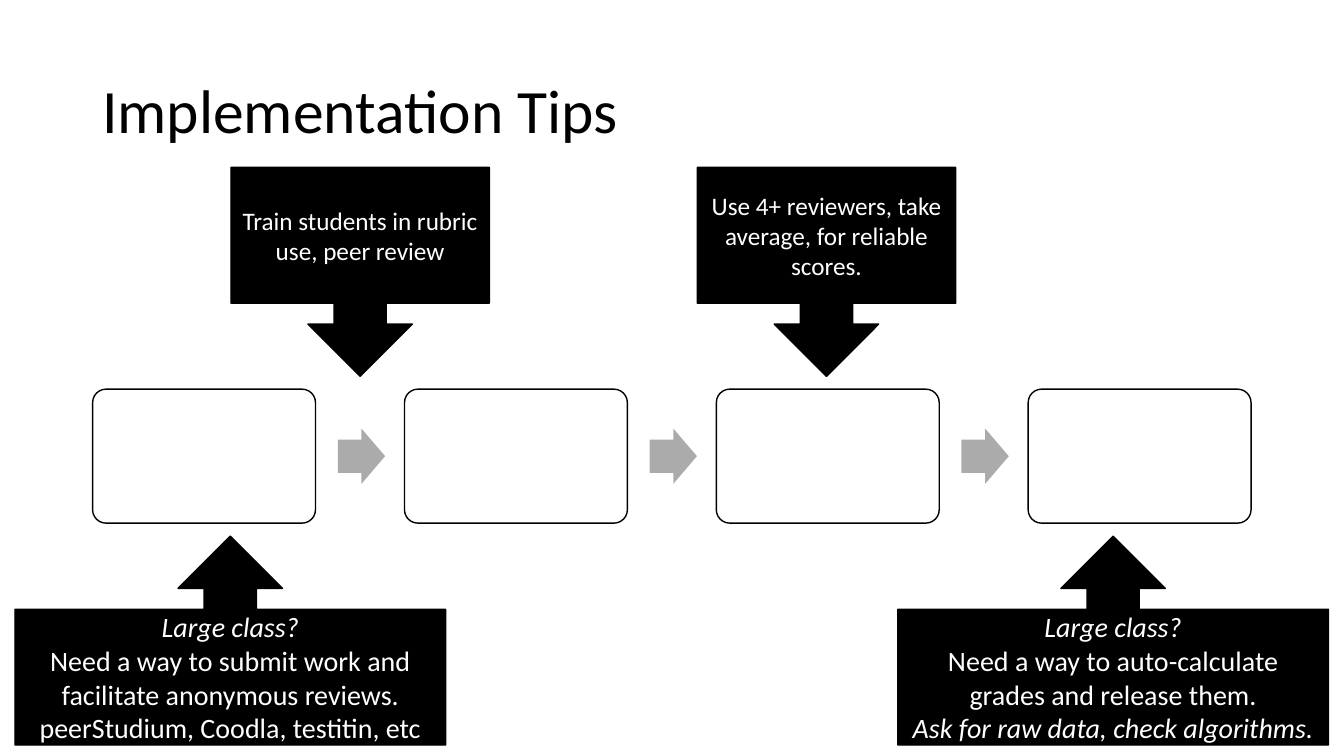
import dataclasses
import typing

import pptx
import pptx.dml.color
import pptx.enum.shapes
import pptx.enum.text
import pptx.util

Pt = pptx.util.Pt
Kind = pptx.enum.shapes.MSO_SHAPE
Align = pptx.enum.text.PP_ALIGN


@dataclasses.dataclass(frozen=True)
class Theme:
    font: str = "Calibri"
    black: str = "000000"
    white: str = "FFFFFF"
    grey: str = "ABABAB"
    title: int = 44
    large: int = 20
    small: int = 18


@dataclasses.dataclass(frozen=True)
class Box:
    left: float
    top: float
    width: float
    height: float

    def points(self) -> list[pptx.util.Length]:
        return [Pt(side) for side in dataclasses.astuple(self)]


class Line(typing.NamedTuple):
    text: str
    slant: bool = False


@dataclasses.dataclass(frozen=True)
class Tip:
    kind: Kind
    box: Box
    size: int
    lines: list[Line]


THEME = Theme()
TITLE = Box(66, 28.8, 828, 104.4)
STEP = Box(66.2, 278, 159.2, 95.7)
ARROW = Box(241.3, 306.1, 33.8, 39.5)
PITCH = 222.75
COUNT = 4

TIPS = [
    Tip(Kind.UP_ARROW_CALLOUT, Box(10.7, 383, 307.6, 149.2), THEME.large, [
        Line("Large class?", True),
        Line("Need a way to submit work and facilitate anonymous reviews."),
        Line("peerStudium, Coodla, testitin, etc"),
    ]),
    Tip(Kind.DOWN_ARROW_CALLOUT, Box(498.1, 119.6, 184.6, 149.2), THEME.small, [
        Line("Use 4+ reviewers, take average, for reliable scores."),
    ]),
    Tip(Kind.UP_ARROW_CALLOUT, Box(641.3, 383, 307.6, 149.2), THEME.large, [
        Line("Large class?", True),
        Line("Need a way to auto-calculate grades and release them."),
        Line("Ask for raw data, check algorithms.", True),
    ]),
    Tip(Kind.DOWN_ARROW_CALLOUT, Box(165, 119.6, 184.6, 149.2), THEME.small, [
        Line("Train students in rubric use, peer review"),
    ]),
]


def tint(code: str) -> pptx.dml.color.RGBColor:
    return pptx.dml.color.RGBColor.from_string(code)


def write(shape, lines: list[Line], size: int, ink: str, form: dict) -> None:
    """Fill a shape with lines; form holds paragraph settings."""
    frame = shape.text_frame
    frame.word_wrap = True
    frame.vertical_anchor = pptx.enum.text.MSO_ANCHOR.MIDDLE
    for place, line in enumerate(lines):
        para = frame.add_paragraph() if place else frame.paragraphs[0]
        for name, value in form.items():
            setattr(para, name, value)
        run = para.add_run()
        run.text = line.text
        looks = {"name": THEME.font, "size": Pt(size), "italic": line.slant}
        for name, value in looks.items():
            setattr(run.font, name, value)
        run.font.color.rgb = tint(ink)


def draw(slide, kind: Kind, box: Box, fill: str, edge: str | None = None):
    """Add a plain shape, with a thin edge if a colour is given."""
    shape = slide.shapes.add_shape(kind, *box.points())
    shape.shadow.inherit = False
    shape.fill.solid()
    shape.fill.fore_color.rgb = tint(fill)
    if edge:
        shape.line.color.rgb = tint(edge)
        shape.line.width = Pt(1)
    else:
        shape.line.fill.background()
    return shape


def draw_steps(slide) -> None:
    for place in range(COUNT):
        shift = place * PITCH
        step = dataclasses.replace(STEP, left=STEP.left + shift)
        shape = draw(slide, Kind.ROUNDED_RECTANGLE, step, THEME.white, THEME.black)
        shape.adjustments[0] = 0.1
        if place < COUNT - 1:
            box = dataclasses.replace(ARROW, left=ARROW.left + shift)
            arrow = draw(slide, Kind.RIGHT_ARROW, box, THEME.grey)
            arrow.adjustments[0] = 0.6
            arrow.adjustments[1] = 0.5


def draw_tip(slide, tip: Tip) -> None:
    shape = draw(slide, tip.kind, tip.box, THEME.black, THEME.black)
    write(shape, tip.lines, tip.size, THEME.white, {"alignment": Align.CENTER})


def main() -> None:
    deck = pptx.Presentation()
    deck.slide_width, deck.slide_height = Pt(960), Pt(540)
    slide = deck.slides.add_slide(deck.slide_layouts[6])
    title = slide.shapes.add_textbox(*TITLE.points())
    form = {"alignment": Align.LEFT, "line_spacing": 0.9}
    write(title, [Line("Implementation Tips")], THEME.title, THEME.black, form)
    draw_steps(slide)
    for tip in TIPS:
        draw_tip(slide, tip)
    deck.save("out.pptx")


if __name__ == "__main__":
    main()
